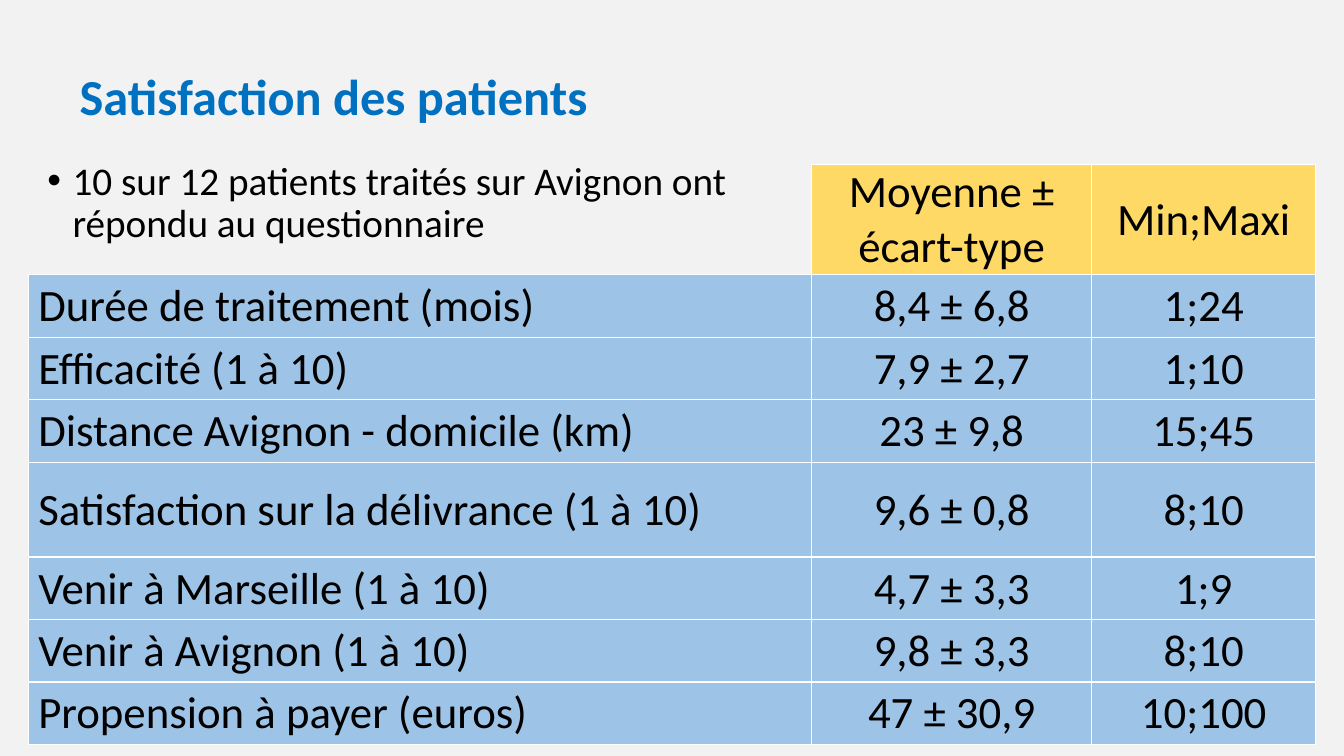
from lxml import etree
from pptx import Presentation
from pptx import util as u
from pptx.dml import color
from pptx.enum import text
from pptx.oxml import ns

HUES = {
    "back": "F2F2F2",
    "title": "0070C0",
    "text": "000000",
    "head": "FFD966",
    "row": "9DC3E6",
    "line": "FFFFFF",
}
HEAD = ("", "Moyenne ± écart-type", "Min;Maxi")
ROWS = [
    ("Durée de traitement (mois)", "8,4 ± 6,8", "1;24"),
    ("Efficacité (1 à 10)", "7,9 ± 2,7", "1;10"),
    ("Distance Avignon - domicile (km)", "23 ± 9,8", "15;45"),
    ("Satisfaction sur la délivrance (1 à 10)", "9,6 ± 0,8", "8;10"),
    ("Venir à Marseille (1 à 10)", "4,7 ± 3,3", "1;9"),
    ("Venir à Avignon (1 à 10)", "9,8 ± 3,3", "8;10"),
    ("Propension à payer (euros)", "47 ± 30,9", "10;100"),
]
WIDE = (7.77, 2.78, 2.22)
TALL, LOW = 0.94, 0.62
TALL_ROWS = (0, 4)


def rgb(name):
    """Return the named colour."""
    return color.RGBColor.from_string(HUES[name])


def style(para, size, hue="text", bold=False):
    """Format the runs of a paragraph."""
    for run in para.runs:
        run.font.name = "Calibri"
        run.font.size = u.Pt(size)
        run.font.bold = bold
        run.font.color.rgb = rgb(hue)


def indent(para, left, first=0):
    """Set the left margin and first-line indent of a paragraph."""
    props = para._p.get_or_add_pPr()
    props.set("marL", str(u.Inches(left)))
    props.set("indent", str(u.Inches(first)))


def place(shape, box):
    """Move a placeholder to its box and fix its text size."""
    shape.left, shape.top, shape.width, shape.height = map(u.Inches, box)
    shape.text_frame.auto_size = text.MSO_AUTO_SIZE.NONE
    shape.text_frame.word_wrap = True


def add_title(slide, box):
    """Fill the title placeholder."""
    shape = slide.shapes.title
    place(shape, box)
    frame = shape.text_frame
    frame.text = "Satisfaction des patients"
    frame.vertical_anchor = text.MSO_ANCHOR.MIDDLE
    para = frame.paragraphs[0]
    para.alignment = text.PP_ALIGN.LEFT
    para.line_spacing = 0.9
    style(para, 36, "title", True)


def add_body(slide, box):
    """Fill the body placeholder with its bullet."""
    shape = slide.placeholders[1]
    place(shape, box)
    frame = shape.text_frame
    frame.text = "10 sur 12 patients traités sur Avignon ont répondu au questionnaire"
    para = frame.paragraphs[0]
    para.line_spacing = 0.9
    para.space_before = u.Pt(10)
    indent(para, 0.25, -0.25)
    style(para, 28)


def edge(cell, shown):
    """Draw the shown sides of a cell and clear the others."""
    props = cell._tc.get_or_add_tcPr()
    for spot, side in enumerate("LRTB"):
        line = etree.Element(ns.qn(f"a:ln{side}"), w=str(u.Pt(1)))
        if side in shown:
            fill = etree.SubElement(line, ns.qn("a:solidFill"))
            etree.SubElement(fill, ns.qn("a:srgbClr"), val=HUES["line"])
        else:
            etree.SubElement(line, ns.qn("a:noFill"))
        props.insert(spot, line)


def fill_cell(cell, words, row, col):
    """Write and format one table cell."""
    if not words:
        edge(cell, "RB")
        cell.fill.background()
        return
    edge(cell, "LRTB")
    cell.fill.solid()
    cell.fill.fore_color.rgb = rgb("row" if row else "head")
    cell.margin_left = cell.margin_right = cell.margin_top = u.Inches(0.01)
    cell.margin_bottom = 0
    cell.vertical_anchor = text.MSO_ANCHOR.MIDDLE
    cell.text_frame.text = words
    para = cell.text_frame.paragraphs[0]
    if col:
        para.alignment = text.PP_ALIGN.CENTER
    else:
        indent(para, 0.09)
    style(para, 32)


def add_grid(slide, box):
    """Add the table of results."""
    data = [HEAD, *ROWS]
    frame = slide.shapes.add_table(len(data), len(HEAD), *map(u.Inches, box))
    grid = frame.table
    grid.first_row = grid.horz_banding = False
    for col, wide in zip(grid.columns, WIDE):
        col.width = u.Inches(wide)
    for row, line in enumerate(data):
        grid.rows[row].height = u.Inches(TALL if row in TALL_ROWS else LOW)
        for col, words in enumerate(line):
            fill_cell(grid.cell(row, col), words, row, col)


def main():
    """Build and save the slide."""
    deck = Presentation()
    deck.slide_width, deck.slide_height = u.Inches(13.33), u.Inches(7.5)
    slide = deck.slides.add_slide(deck.slide_layouts[1])
    slide.background.fill.solid()
    slide.background.fill.fore_color.rgb = rgb("back")
    add_title(slide, (0.69, 0.26, 11.5, 1.45))
    add_body(slide, (0.37, 1.55, 7.55, 1.92))
    add_grid(slide, (0.28, 1.63, sum(WIDE), 5.6))
    deck.save("out.pptx")


if __name__ == "__main__":
    main()
